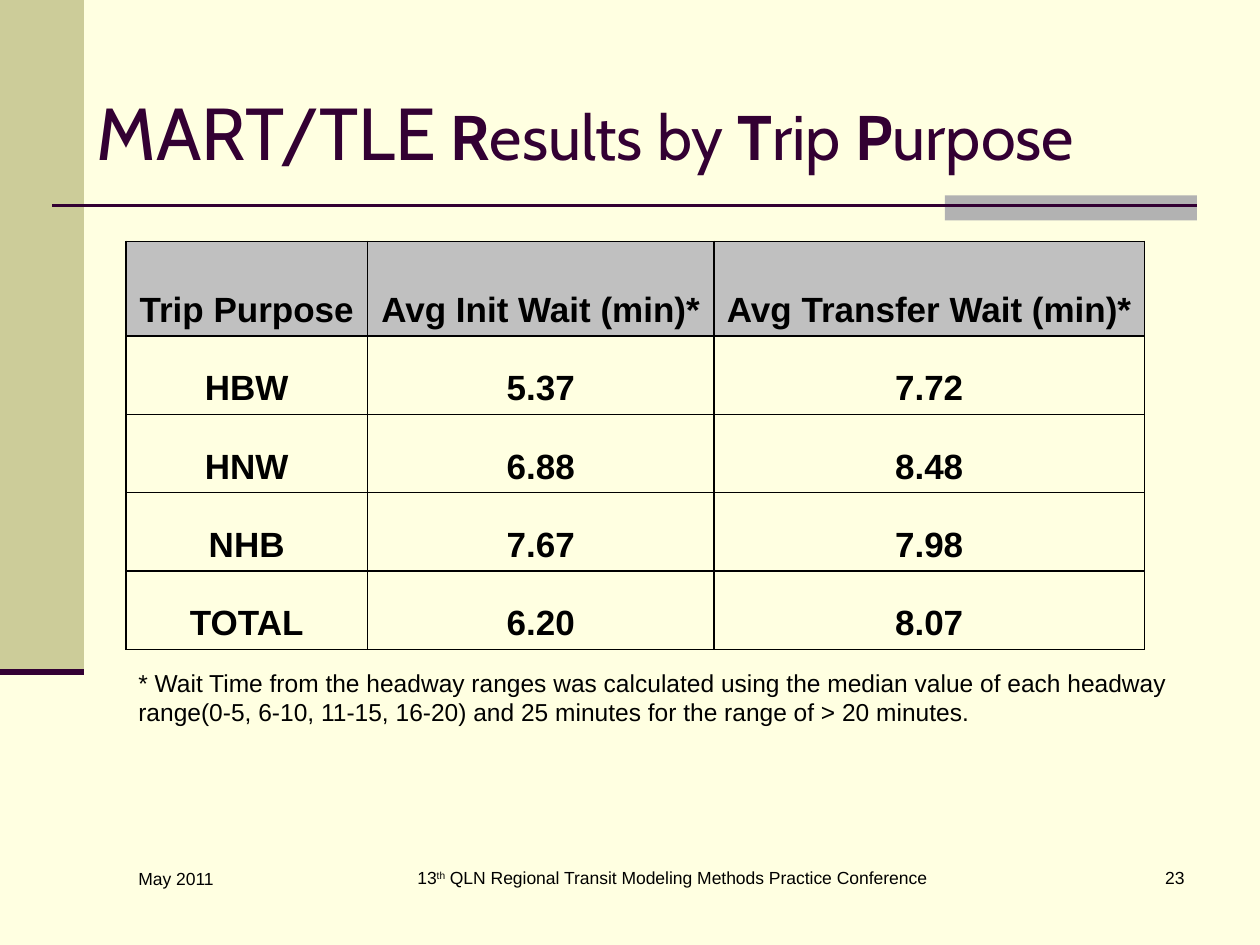
from dataclasses import dataclass

from lxml.etree import SubElement
from pptx import Presentation
from pptx.dml.color import RGBColor
from pptx.enum.shapes import MSO_CONNECTOR as Connector, MSO_SHAPE as Shape
from pptx.enum.text import MSO_ANCHOR as Anchor, MSO_AUTO_SIZE as AutoSize, PP_ALIGN as Align
from pptx.oxml.ns import qn
from pptx.util import Pt

CREAM = RGBColor(0xFF, 0xFF, 0xE1)
OLIVE = RGBColor(0xCC, 0xCC, 0x99)
GRAY = RGBColor(0xB2, 0xB2, 0xB2)
SILVER = RGBColor(0xC0, 0xC0, 0xC0)
PLUM = RGBColor(0x33, 0x00, 0x33)
BLACK = RGBColor(0, 0, 0)


@dataclass
class Bar:
    left: float
    top: float
    width: float
    height: float
    color: RGBColor


@dataclass
class Rule:
    left: float
    right: float
    y: float
    weight: float


@dataclass
class Label:
    left: float
    top: float
    width: float
    height: float
    size: float
    align: Align
    spans: list[tuple[str, bool]]  # text, superscript


BARS = [Bar(0, 0, 48, 384, OLIVE), Bar(540, 111.6, 144, 14.4, GRAY)]
RULES = [Rule(30, 684, 117.5, 1.5), Rule(0, 48, 384, 3.5)]
TITLE_SPANS = [  # text, size, bold
    ("MART/TLE", 42, False), (" ", 36, False),
    ("R", 36, True), ("esults by ", 36, False),
    ("T", 36, True), ("rip ", 36, False),
    ("P", 36, True), ("urpose", 36, False),
]
COLUMN_WIDTHS = [138, 198, 246]
ROW_HEIGHTS = [54] + [44.8] * 4
WAIT_TIMES = [
    ("Trip Purpose", "Avg Init Wait (min)*", "Avg Transfer Wait (min)*"),
    ("HBW", "5.37", "7.72"),
    ("HNW", "6.88", "8.48"),
    ("NHB", "7.67", "7.98"),
    ("TOTAL", "6.20", "8.07"),
]
LABELS = [
    Label(72, 378, 648, 41, 14, Align.LEFT, [
        ("* Wait Time from the headway ranges was calculated using the median value of each "
         "headway range(0-5, 6-10, 11-15, 16-20) and 25 minutes for the range of > 20 minutes.",
         False)]),
    Label(534, 492, 150, 36, 10, Align.RIGHT, [("23", False)]),
    Label(72, 492.5, 156, 36, 10, Align.LEFT, [("May 2011", False)]),
    Label(102, 492, 564, 36, 10, Align.CENTER, [
        ("13", False), ("th", True),
        (" QLN Regional Transit Modeling Methods Practice Conference", False)]),
]


def draw_bar(page, bar: Bar) -> None:
    shape = page.shapes.add_shape(Shape.RECTANGLE, Pt(bar.left), Pt(bar.top),
                                  Pt(bar.width), Pt(bar.height))
    shape.shadow.inherit = False
    shape.fill.solid()
    shape.fill.fore_color.rgb = bar.color
    shape.line.fill.background()


def draw_rule(page, rule: Rule) -> None:
    line = page.shapes.add_connector(Connector.STRAIGHT, Pt(rule.left), Pt(rule.y),
                                     Pt(rule.right), Pt(rule.y))
    line.line.color.rgb = PLUM
    line.line.width = Pt(rule.weight)
    SubElement(line._element.spPr, qn("a:effectLst"))


def set_font(para, size: float, bold: bool = False) -> None:
    para.font.name = "Arial"
    para.font.size = Pt(size)
    para.font.bold = bold
    para.font.color.rgb = BLACK


def draw_label(page, label: Label) -> None:
    box = page.shapes.add_textbox(Pt(label.left), Pt(label.top),
                                  Pt(label.width), Pt(label.height))
    box.text_frame.word_wrap = True
    para = box.text_frame.paragraphs[0]
    para.alignment = label.align
    set_font(para, label.size)
    for text, superscript in label.spans:
        span = para.add_run()
        span.text = text
        if superscript:
            span.font._element.set("baseline", "30000")


def fill_title(title) -> None:
    title.left, title.top, title.width, title.height = Pt(48), Pt(30), Pt(612), Pt(90)
    frame = title.text_frame
    frame.auto_size = AutoSize.NONE
    frame.word_wrap = True
    frame.vertical_anchor = Anchor.MIDDLE
    para = frame.paragraphs[0]
    para.alignment = Align.LEFT
    para.font.name = "Cabin"
    para.font.color.rgb = PLUM
    for text, size, bold in TITLE_SPANS:
        span = para.add_run()
        span.text = text
        span.font.size = Pt(size)
        span.font.bold = bold


def add_borders(cell) -> None:
    properties = cell._tc.get_or_add_tcPr()
    for index, side in enumerate(("a:lnL", "a:lnR", "a:lnT", "a:lnB")):
        border = properties.makeelement(qn(side), {"w": str(Pt(1))})
        fill = SubElement(border, qn("a:solidFill"))
        SubElement(fill, qn("a:srgbClr"), val=str(BLACK))
        properties.insert(index, border)  # borders come before the cell fill


def draw_table(page) -> None:
    table = page.shapes.add_table(len(ROW_HEIGHTS), len(COLUMN_WIDTHS), Pt(72), Pt(138),
                                  Pt(sum(COLUMN_WIDTHS)), Pt(sum(ROW_HEIGHTS))).table
    table.first_row = table.horz_banding = False
    for column, width in zip(table.columns, COLUMN_WIDTHS):
        column.width = Pt(width)
    for row_index, (row, height, texts) in enumerate(zip(table.rows, ROW_HEIGHTS, WAIT_TIMES)):
        row.height = Pt(height)
        for cell, text in zip(row.cells, texts):
            cell.text = text
            cell.vertical_anchor = Anchor.BOTTOM
            para = cell.text_frame.paragraphs[0]
            para.alignment = Align.CENTER
            set_font(para, 20, bold=True)
            # Hanging indent
            settings = para._p.get_or_add_pPr()
            settings.set("marL", str(Pt(27)))
            settings.set("indent", str(-Pt(27)))
            if row_index == 0:
                cell.fill.solid()
                cell.fill.fore_color.rgb = SILVER
            else:
                cell.fill.background()
            add_borders(cell)


def main() -> None:
    deck = Presentation()
    deck.slide_width, deck.slide_height = Pt(720), Pt(540)
    page = deck.slides.add_slide(deck.slide_layouts[5])
    page.background.fill.solid()
    page.background.fill.fore_color.rgb = CREAM

    # Side band, accent bar and rules
    for bar in BARS:
        draw_bar(page, bar)
    for rule in RULES:
        draw_rule(page, rule)

    # Title, table, footnote and footer
    fill_title(page.shapes.title)
    draw_table(page)
    for label in LABELS:
        draw_label(page, label)
    deck.save("out.pptx")


if __name__ == "__main__":
    main()
